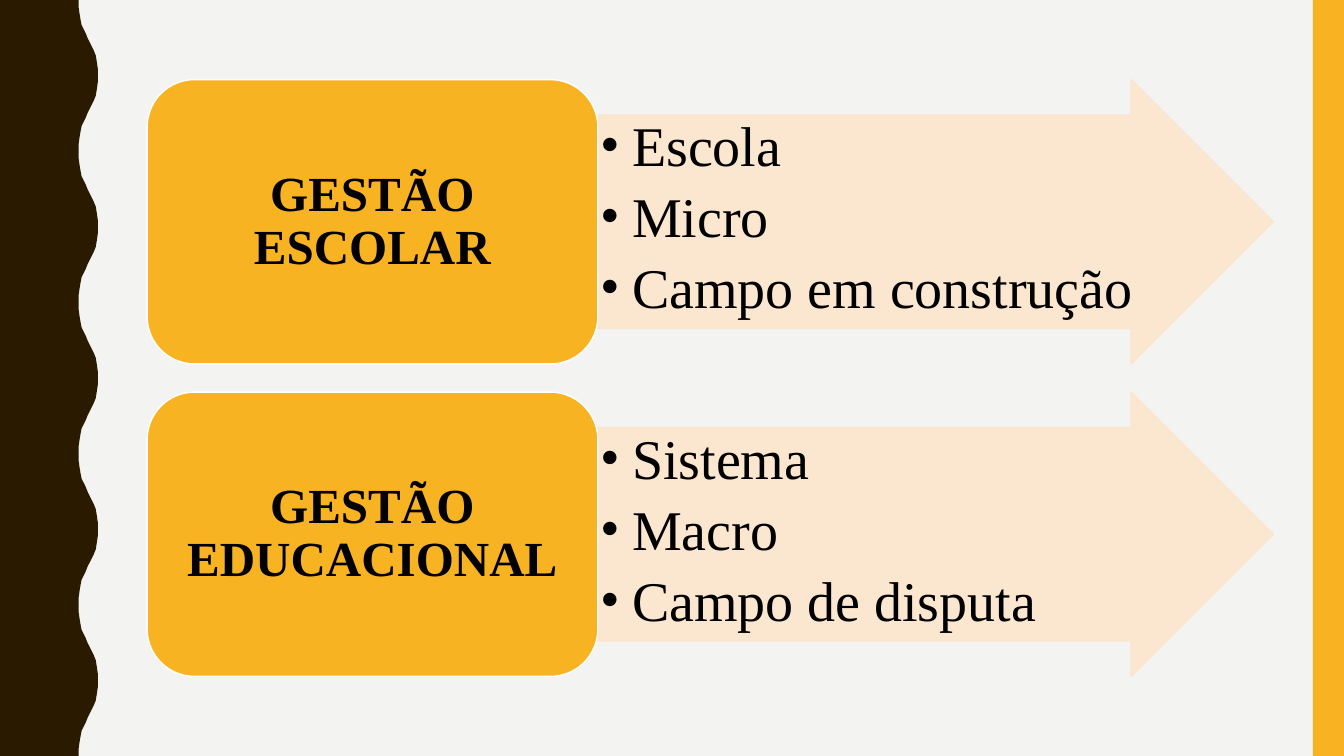
from lxml.etree import SubElement
from pptx import Presentation
from pptx.dml.color import RGBColor
from pptx.enum.shapes import MSO_SHAPE
from pptx.enum.text import MSO_ANCHOR, PP_ALIGN
from pptx.oxml.ns import qn
from pptx.util import Inches, Pt

AMBER, BROWN, PEACH = "F8B323", "2A1A00", "FCE5CD"
GROUPS = [
    ("GESTÃO ESCOLAR", ["Escola", "Micro", "Campo em construção"]),
    ("GESTÃO EDUCACIONAL", ["Sistema", "Macro", "Campo de disputa"]),
]
# Half of one wave, in hundredths of an inch
HALF = [(78, 0), (78, 7), (79, 14), (80, 20), (81, 25), (83, 29), (85, 33),
        (87, 38), (89, 42), (91, 46), (93, 50), (95, 55), (96, 61),
        (97, 68), (97, 75)]
WAVE, COUNT = 150, 5


def apply(item, **values):
    for name, value in values.items():
        setattr(item, name, value)


def color(code):
    return RGBColor.from_string(code)


def paint(shape, fill, line=None):
    shape.shadow.inherit = False
    shape.fill.solid()
    shape.fill.fore_color.rgb = color(fill)
    if line:
        shape.line.color.rgb = color(line)
        shape.line.width = Pt(1)
    else:
        shape.line.fill.background()


def fade(shape, share):
    for tone in shape._element.spPr.iter(qn("a:srgbClr")):
        SubElement(tone, qn("a:alpha"), val=str(share * 1000))


def add_box(slide, kind, place, fill, line=None):
    shape = slide.shapes.add_shape(kind, *map(Inches, place))
    paint(shape, fill, line)
    return shape


def write(shape, lines, pads, anchor, font, para):
    frame = shape.text_frame
    side, edge = map(Inches, pads)
    apply(frame, word_wrap=True, vertical_anchor=anchor, margin_left=side,
          margin_right=side, margin_top=edge, margin_bottom=edge)
    frame.text = "\n".join(lines)
    for item in frame.paragraphs:
        apply(item, line_spacing=0.9, **para)
        run = item.runs[0]
        apply(run.font, name="Times New Roman", **font)
        run.font.color.rgb = color("000000")
    return frame.paragraphs


def bullet(item):
    props = item._p.get_or_add_pPr()
    props.set("marL", str(Inches(0.31)))
    props.set("indent", str(Inches(-0.31)))
    SubElement(props, qn("a:buFont"), typeface="Times New Roman")
    SubElement(props, qn("a:buChar"), char="•")


def add_wave(slide):
    cycle = HALF + [(x, WAVE - y) for x, y in HALF[-2::-1]]
    points = [(x, y + WAVE * turn) for turn in range(COUNT) for x, y in cycle]
    outline = slide.shapes.build_freeform(0, 0, scale=Inches(0.01))
    outline.add_line_segments(points + [(0, WAVE * COUNT)], close=True)
    paint(outline.convert_to_shape(), BROWN)


def add_group(slide, top, title, points):
    # Arrow with the bullet list
    arrow = add_box(slide, MSO_SHAPE.RIGHT_ARROW, (5.93, top, 6.7, 2.82),
                    PEACH, PEACH)
    arrow.adjustments[0] = 0.75
    fade(arrow, 90)
    items = write(arrow, points, (0.03, 0.03), MSO_ANCHOR.TOP,
                  {"size": Pt(40)},
                  {"alignment": PP_ALIGN.LEFT, "level": 1,
                   "space_after": Pt(7.5)})
    for item in items:
        bullet(item)

    # Heading box
    box = add_box(slide, MSO_SHAPE.ROUNDED_RECTANGLE, (1.46, top, 4.47, 2.82),
                  AMBER, "FFFFFF")
    write(box, [title], (0.15, 0.07), MSO_ANCHOR.MIDDLE,
          {"size": Pt(35), "bold": True}, {"alignment": PP_ALIGN.CENTER})


def main():
    deck = Presentation()
    apply(deck, slide_width=Inches(13.33), slide_height=Inches(7.5))
    slide = deck.slides.add_slide(deck.slide_layouts[6])

    # Backdrop
    back = slide.background.fill
    back.solid()
    back.fore_color.rgb = color("F3F3F2")
    add_wave(slide)
    add_box(slide, MSO_SHAPE.RECTANGLE, (13.02, 0, 0.31, 7.5), AMBER)

    # Two kinds of management
    for row, (title, points) in enumerate(GROUPS):
        add_group(slide, 0.79 + 3.1 * row, title, points)

    deck.save("out.pptx")


if __name__ == "__main__":
    main()
